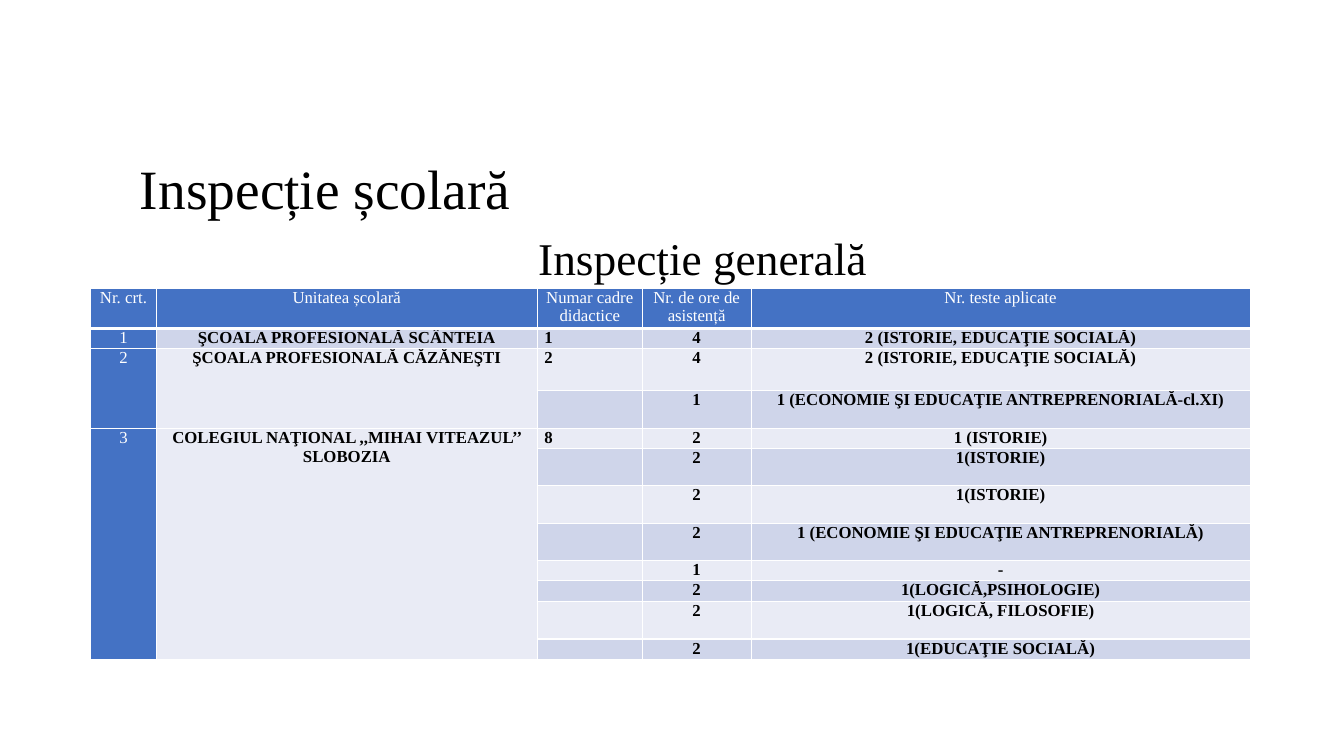
from lxml.etree import SubElement
from pptx import Presentation
from pptx.dml.color import RGBColor
from pptx.enum.text import MSO_ANCHOR as Anchor, PP_ALIGN as Align
from pptx.oxml import parse_xml
from pptx.oxml.ns import nsdecls, qn
from pptx.util import Inches, Pt

FONT = "Times New Roman"
BLUE, DARK, LIGHT = "4472C4", "CFD5EA", "E9EBF5"
WHITE, BLACK = "FFFFFF", "000000"

TITLES = [  # text, size, left indent, space before
    ("Inspecție școlară", 39.6, 0, 0),
    ("Inspecție generală", 32.4, 3.95, 3.5),
]
ROWS = [
    ("Nr. crt.", "Unitatea școlară", "Numar cadre didactice",
     "Nr. de ore de asistență", "Nr. teste aplicate"),
    ("1", "ŞCOALA PROFESIONALĂ SCÂNTEIA", "1", "4",
     "2 (ISTORIE, EDUCAŢIE SOCIALĂ)"),
    ("2", "ŞCOALA PROFESIONALĂ CĂZĂNEŞTI", "2", "4",
     "2 (ISTORIE, EDUCAŢIE SOCIALĂ)"),
    ("", "", "", "1", "1 (ECONOMIE ŞI EDUCAŢIE ANTREPRENORIALĂ-cl.XI)"),
    ("3", "COLEGIUL NAŢIONAL ,,MIHAI VITEAZUL’’ SLOBOZIA", "8", "2",
     "1 (ISTORIE)"),
    ("", "", "", "2", "1(ISTORIE)"),
    ("", "", "", "2", "1(ISTORIE)"),
    ("", "", "", "2", "1 (ECONOMIE ŞI EDUCAŢIE ANTREPRENORIALĂ)"),
    ("", "", "", "1", "-"),
    ("", "", "", "2", "1(LOGICĂ,PSIHOLOGIE)"),
    ("", "", "", "2", "1(LOGICĂ, FILOSOFIE)"),
    ("", "", "", "2", "1(EDUCAŢIE SOCIALĂ)"),
]
WIDTHS = [0.65, 3.78, 1.04, 1.08, 4.95]
HEIGHTS = [0.39, 0.2, 0.41, 0.38, 0.2, 0.37, 0.37, 0.37, 0.2, 0.21, 0.37, 0.2]
SPANS = [(2, 3), (4, 11)]  # first and last row of each school
TOP = 2.86  # where the titles end and the table starts


def rgb(code):
    return RGBColor.from_string(code)


def write(para, text, size, color, bold=False):
    run = para.add_run()
    run.text = text
    font = run.font
    font.name, font.size, font.bold = FONT, Pt(size), bold
    font.color.rgb = rgb(color)


def edge(cell, row):
    """Draw white borders, thick under the header row."""
    sides = {"L": 1, "R": 1, "T": 3 if row == 1 else 1,
             "B": 3 if row == 0 else 1}
    props = cell._tc.get_or_add_tcPr()
    for i, (side, width) in enumerate(sides.items()):
        props.insert(i, parse_xml(
            f'<a:ln{side} {nsdecls("a")} w="{Pt(width)}"><a:solidFill>'
            f'<a:srgbClr val="{WHITE}"/></a:solidFill></a:ln{side}>'))


def fill_cell(cell, text, row, col):
    head = row == 0 or col == 0
    cell.margin_left = cell.margin_right = Inches(0.07)
    cell.margin_top = cell.margin_bottom = 0
    cell.vertical_anchor = Anchor.TOP
    cell.fill.solid()
    band = DARK if row % 2 else LIGHT
    cell.fill.fore_color.rgb = rgb(BLUE if head else band)
    edge(cell, row)
    para = cell.text_frame.paragraphs[0]
    para.alignment = Align.JUSTIFY if col == 2 and row else Align.CENTER
    if text:
        write(para, text, 12, WHITE if head else BLACK, not head)
    else:
        SubElement(para._p, qn("a:endParaRPr"), sz="1200")


def add_title(slide):
    high = 1.36
    box = slide.shapes.add_textbox(
        Inches(1.29), Inches(TOP - high), Inches(11.5), Inches(high))
    frame = box.text_frame
    frame.word_wrap = True
    frame.vertical_anchor = Anchor.BOTTOM
    frame.margin_top, frame.margin_bottom = 0, Inches(0.04)
    for i, (text, size, indent, gap) in enumerate(TITLES):
        para = frame.add_paragraph() if i else frame.paragraphs[0]
        if indent:
            para._p.get_or_add_pPr().set("marL", str(Inches(indent)))
        para.line_spacing = 1.07
        para.space_before = Pt(gap)
        write(para, text, size, BLACK)


def add_grid(slide):
    table = slide.shapes.add_table(
        len(ROWS), len(WIDTHS), Inches(0.9), Inches(TOP),
        Inches(sum(WIDTHS)), Inches(sum(HEIGHTS))).table
    table.first_row = table.horz_banding = False
    for col, width in zip(table.columns, WIDTHS):
        col.width = Inches(width)
    for row, height in zip(table.rows, HEIGHTS):
        row.height = Inches(height)
    for r, texts in enumerate(ROWS):
        for c, text in enumerate(texts):
            fill_cell(table.cell(r, c), text, r, c)
    for first, last in SPANS:
        for c in (0, 1):
            table.cell(first, c).merge(table.cell(last, c))


def main():
    deck = Presentation()
    deck.slide_width, deck.slide_height = Inches(13.33), Inches(7.5)
    slide = deck.slides.add_slide(deck.slide_layouts[6])
    add_title(slide)
    add_grid(slide)
    deck.save("out.pptx")


if __name__ == "__main__":
    main()
